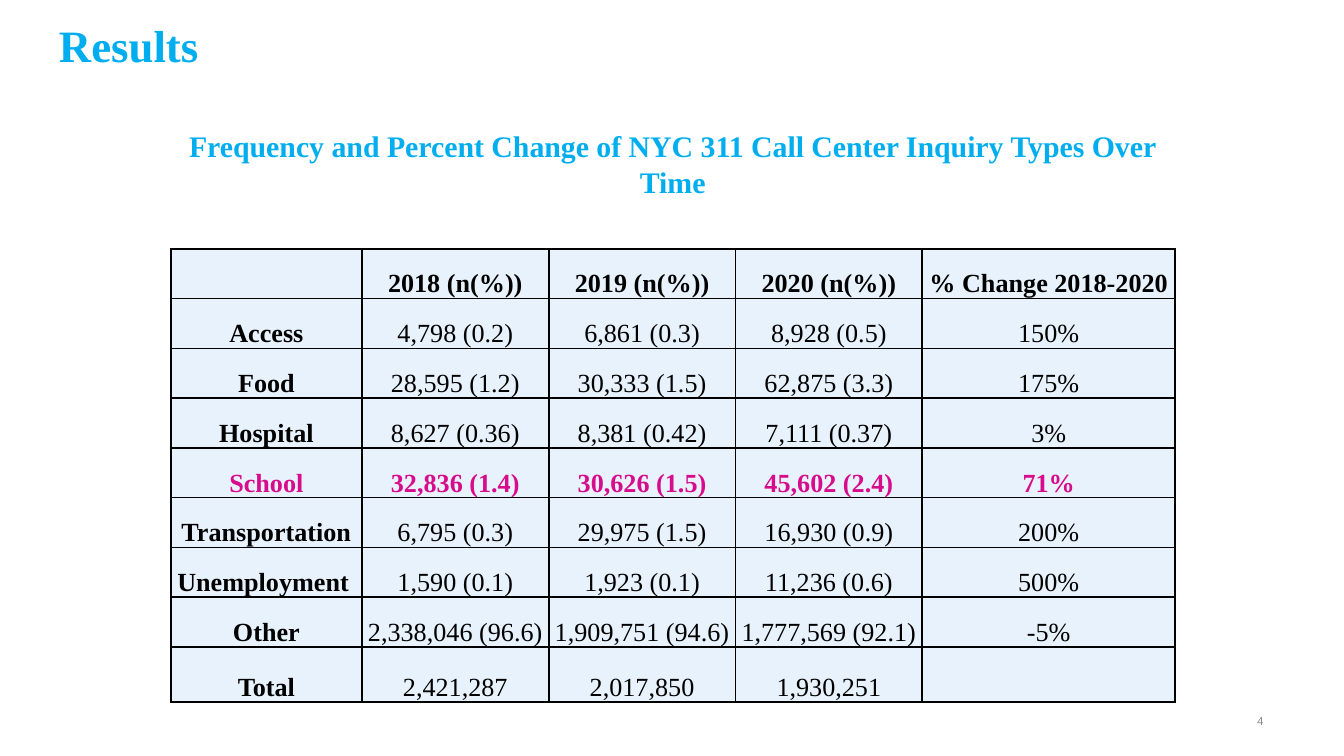
from lxml import etree
from pptx import Presentation
from pptx.dml.color import RGBColor
from pptx.enum import text
from pptx.oxml import ns
from pptx.util import Cm, Pt

CYAN = RGBColor(0x00, 0xAE, 0xEF)
MAGENTA = RGBColor(0xD8, 0x0B, 0x8C)
BLACK = RGBColor(0x00, 0x00, 0x00)
GRAY = RGBColor(0x8C, 0x8C, 0x8C)
PALE_BLUE = RGBColor(0xE7, 0xF2, 0xFC)
SERIF = "Times New Roman"

COLUMN_WIDTHS = [3.61, 3.53, 3.53, 3.53, 4.78]
ROW_HEIGHT = 0.94
TOTAL_HEIGHT = 1.04
HIGHLIGHT = "School"
INQUIRIES = [
    ["", "2018 (n(%))", "2019 (n(%))", "2020 (n(%))", "% Change 2018-2020"],
    ["Access", "4,798 (0.2)", "6,861 (0.3)", "8,928 (0.5)", "150%"],
    ["Food", "28,595 (1.2)", "30,333 (1.5)", "62,875 (3.3)", "175%"],
    ["Hospital", "8,627 (0.36)", "8,381 (0.42)", "7,111 (0.37)", "3%"],
    ["School", "32,836 (1.4)", "30,626 (1.5)", "45,602 (2.4)", "71%"],
    ["Transportation", "6,795 (0.3)", "29,975 (1.5)", "16,930 (0.9)", "200%"],
    ["Unemployment ", "1,590 (0.1)", "1,923 (0.1)", "11,236 (0.6)", "500%"],
    ["Other", "2,338,046 (96.6)", "1,909,751 (94.6)", "1,777,569 (92.1)", "-5%"],
    ["Total", "2,421,287", "2,017,850", "1,930,251", ""],
]


def write(frame, words, size=14, color=BLACK, bold=False, font=SERIF,
          align=text.PP_ALIGN.CENTER):
    para = frame.paragraphs[0]
    para.alignment = align
    if not words:
        para.font.size = Pt(size)
        return
    span = para.add_run()
    span.text = words
    span.font.name = font
    span.font.size = Pt(size)
    span.font.bold = bold
    span.font.color.rgb = color


def add_title(page, left, top, width, height):
    title = page.shapes.title
    title.left, title.top = Cm(left), Cm(top)
    title.width, title.height = Cm(width), Cm(height)
    title.text_frame.vertical_anchor = text.MSO_ANCHOR.BOTTOM
    write(title.text_frame, "Results", size=24, color=CYAN, bold=True,
          align=text.PP_ALIGN.LEFT)


def add_text(page, left, top, width, height, words,
             anchor=text.MSO_ANCHOR.TOP, **style):
    box = page.shapes.add_textbox(Cm(left), Cm(top), Cm(width), Cm(height))
    box.text_frame.word_wrap = True
    box.text_frame.vertical_anchor = anchor
    write(box.text_frame, words, **style)


def add_borders(cell):
    properties = cell._tc.get_or_add_tcPr()
    for side in ("a:lnL", "a:lnR", "a:lnT", "a:lnB"):
        line = etree.SubElement(properties, ns.qn(side), w=str(Pt(1)))
        fill = etree.SubElement(line, ns.qn("a:solidFill"))
        etree.SubElement(fill, ns.qn("a:srgbClr"), val=str(BLACK))


def add_inquiry_table(page, left, top):
    heights = [ROW_HEIGHT] * (len(INQUIRIES) - 1) + [TOTAL_HEIGHT]
    table = page.shapes.add_table(
        len(heights), len(COLUMN_WIDTHS), Cm(left), Cm(top),
        Cm(sum(COLUMN_WIDTHS)), Cm(sum(heights))).table
    table.first_row = table.horz_banding = False
    for column, width in zip(table.columns, COLUMN_WIDTHS):
        column.width = Cm(width)
    for row, height in zip(table.rows, heights):
        row.height = Cm(height)
    for r, values in enumerate(INQUIRIES):
        highlighted = values[0] == HIGHLIGHT
        for c, words in enumerate(values):
            cell = table.cell(r, c)
            cell.margin_left = cell.margin_right = cell.margin_top = Cm(0.02)
            cell.margin_bottom = 0
            cell.vertical_anchor = text.MSO_ANCHOR.BOTTOM
            add_borders(cell)
            cell.fill.solid()
            cell.fill.fore_color.rgb = PALE_BLUE
            write(cell.text_frame, words,
                  color=MAGENTA if highlighted else BLACK,
                  bold=highlighted or r == 0 or c == 0)


def main():
    deck = Presentation()
    deck.slide_width, deck.slide_height = Cm(25.4), Cm(14.28)
    page = deck.slides.add_slide(deck.slide_layouts[5])
    add_text(page, 18.21, 13.23, 5.92, 0.76, "4", size=6.2, color=GRAY,
             font="Arial", align=text.PP_ALIGN.RIGHT,
             anchor=text.MSO_ANCHOR.MIDDLE)
    add_text(page, 2.72, 2.29, 19.99, 1.63,
             "Frequency and Percent Change of NYC 311 Call Center "
             "Inquiry Types Over Time", size=16, color=CYAN, bold=True)
    add_title(page, 0.86, 0.18, 22.86, 1.3)
    add_inquiry_table(page, 3.23, 4.7)
    deck.save("out.pptx")


if __name__ == "__main__":
    main()
